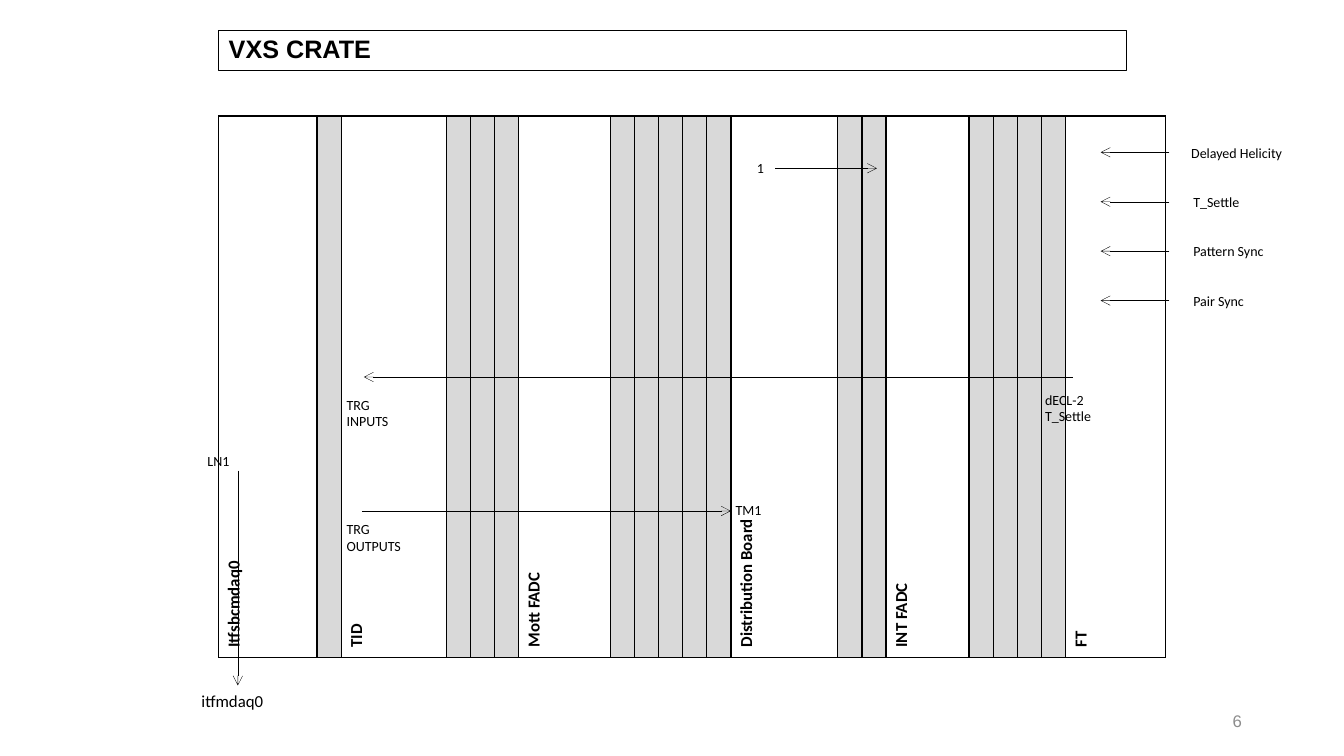
from dataclasses import dataclass

from lxml.etree import SubElement
from pptx import Presentation
from pptx.dml.color import RGBColor
from pptx.enum.shapes import MSO_CONNECTOR
from pptx.enum.text import MSO_ANCHOR, MSO_AUTO_SIZE, PP_ALIGN
from pptx.oxml import parse_xml
from pptx.oxml.ns import nsdecls, qn
from pptx.util import Pt

TITLE = "VXS CRATE"
PAGE_NUMBER = "6"

# Module name, column width, number of grey slots to its right
MODULES = [
    ("Itfsbcmdaq0", 70.3, 1),
    ("TID", 75, 3),
    ("Mott FADC", 65.6, 5),
    ("Distribution Board", 76.3, 2),
    ("INT FADC", 59.3, 4),
    ("FT", 71.5, 0),
]
# Signal name, left edge of its label
HELICITY_SIGNALS = [
    ("Delayed Helicity", 843.8),
    ("T_Settle", 845.3),
    ("Pattern Sync", 845.3),
    ("Pair Sync", 845.3),
]
# Start x, start y, end x, end y
ARROWS = [
    (169.9, 336.2, 169.9, 489.6),
    (258.5, 365, 522, 365),
    (553.7, 120.2, 626.4, 120.2),
    (766.1, 269.3, 259.9, 269.3),
]
# Text, left, top, width, height
LABELS = [
    ("TRG OUTPUTS", 240.5, 368.6, 54, 31.7),
    ("1", 533.5, 110.2, 25.2, 19.4),
    ("LN1", 141.1, 319.7, 36, 19.4),
    ("TM1", 518.4, 355, 47.5, 19.4),
    ("TRG\nINPUTS", 240.5, 279.4, 54, 31.7),
    ("dECL-2\nT_Settle", 739.4, 275.8, 54, 31.7),
]


@dataclass(frozen=True)
class Theme:
    ink: RGBColor = RGBColor(0x00, 0x00, 0x00)
    slot: RGBColor = RGBColor(0xD9, 0xD9, 0xD9)
    page: RGBColor = RGBColor(0x8C, 0x8C, 0x8C)
    heading_font: str = "Arial"
    body_font: str = "Calibri"
    title_size: int = 18
    module_size: int = 12
    label_size: int = 10
    thin_line: float = 0.25


THEME = Theme()
CRATE_LEFT, CRATE_TOP, CRATE_HEIGHT = 156.2, 82.8, 386.9
SLOT_WIDTH = 17.1
SIGNAL_TOP, SIGNAL_PITCH = 108.8, 35.3
SIGNAL_START, SIGNAL_END = 835.2, 786.2


def style_text(text_frame, size, font=THEME.body_font, color=THEME.ink, bold=False):
    for paragraph in text_frame.paragraphs:
        for run in paragraph.runs:
            run.font.name = font
            run.font.size = Pt(size)
            run.font.bold = bold
            run.font.color.rgb = color


def add_title(slide):
    title = slide.shapes.title
    title.left, title.top, title.width, title.height = Pt(156.2), Pt(21.6), Pt(648), Pt(28.4)
    title.line.color.rgb = THEME.ink
    title.line.width = Pt(THEME.thin_line)
    text_frame = title.text_frame
    text_frame.text = TITLE
    text_frame.auto_size = MSO_AUTO_SIZE.NONE
    text_frame.vertical_anchor = MSO_ANCHOR.MIDDLE
    text_frame.paragraphs[0].alignment = PP_ALIGN.LEFT
    text_frame.paragraphs[0].line_spacing = 0.9
    style_text(text_frame, THEME.title_size, THEME.heading_font, bold=True)


def add_label(slide, text, left, top, width, height, size=THEME.label_size):
    box = slide.shapes.add_textbox(Pt(left), Pt(top), Pt(width), Pt(height))
    box.text_frame.text = text
    box.text_frame.word_wrap = True
    box.text_frame.auto_size = MSO_AUTO_SIZE.SHAPE_TO_FIT_TEXT
    style_text(box.text_frame, size)


def add_arrow(slide, *ends):
    arrow = slide.shapes.add_connector(MSO_CONNECTOR.STRAIGHT, *(Pt(end) for end in ends))
    arrow.line.color.rgb = THEME.ink
    arrow.line.width = Pt(THEME.thin_line)
    SubElement(arrow.line._get_or_add_ln(), qn("a:tailEnd"), type="arrow")
    SubElement(arrow._element.spPr, qn("a:effectLst"))


def add_borders(cell):
    """Draw black one-point borders; they must precede the fill in the cell properties."""
    properties = cell._tc.get_or_add_tcPr()
    for position, side in enumerate(("lnL", "lnR", "lnT", "lnB")):
        border = parse_xml(
            f'<a:{side} {nsdecls("a")} w="{Pt(1)}"><a:solidFill>'
            f'<a:srgbClr val="{THEME.ink}"/></a:solidFill></a:{side}>'
        )
        properties.insert(position, border)


def add_crate(slide):
    columns = []
    for name, width, slots in MODULES:
        columns += [(name, width)] + [("", SLOT_WIDTH)] * slots
    total = sum(width for _, width in columns)
    frame = slide.shapes.add_table(
        1, len(columns), Pt(CRATE_LEFT), Pt(CRATE_TOP), Pt(total), Pt(CRATE_HEIGHT)
    )
    table = frame.table
    table.first_row = False
    table.horz_banding = False
    for index, (name, width) in enumerate(columns):
        table.columns[index].width = Pt(width)
        cell = table.cell(0, index)
        if name:
            cell.text_frame.text = name
            style_text(cell.text_frame, THEME.module_size, bold=True)
            cell._tc.get_or_add_tcPr().set("vert", "vert270")
            cell.fill.background()
        else:
            cell.fill.solid()
            cell.fill.fore_color.rgb = THEME.slot
        add_borders(cell)


def add_page_number(slide):
    box = slide.shapes.add_textbox(Pt(678.2), Pt(500.4), Pt(216), Pt(28.8))
    text_frame = box.text_frame
    text_frame.text = PAGE_NUMBER
    text_frame.word_wrap = True
    text_frame.vertical_anchor = MSO_ANCHOR.MIDDLE
    text_frame.paragraphs[0].alignment = PP_ALIGN.RIGHT
    style_text(text_frame, THEME.module_size, THEME.heading_font, THEME.page)


def main():
    presentation = Presentation()
    presentation.slide_width, presentation.slide_height = Pt(960), Pt(540)
    slide = presentation.slides.add_slide(presentation.slide_layouts[5])
    add_title(slide)
    add_crate(slide)
    for arrow in ARROWS:
        add_arrow(slide, *arrow)
    for label in LABELS:
        add_label(slide, *label)
    add_label(slide, "itfmdaq0", 136.8, 489.6, 82.8, 21.6, THEME.module_size)
    for index, (signal, left) in enumerate(HELICITY_SIGNALS):
        y = SIGNAL_TOP + index * SIGNAL_PITCH
        add_arrow(slide, SIGNAL_START, y, SIGNAL_END, y)
        add_label(slide, signal, left, y - 9.4, 82.8, 19.4)
    add_page_number(slide)
    presentation.save("out.pptx")


if __name__ == "__main__":
    main()
